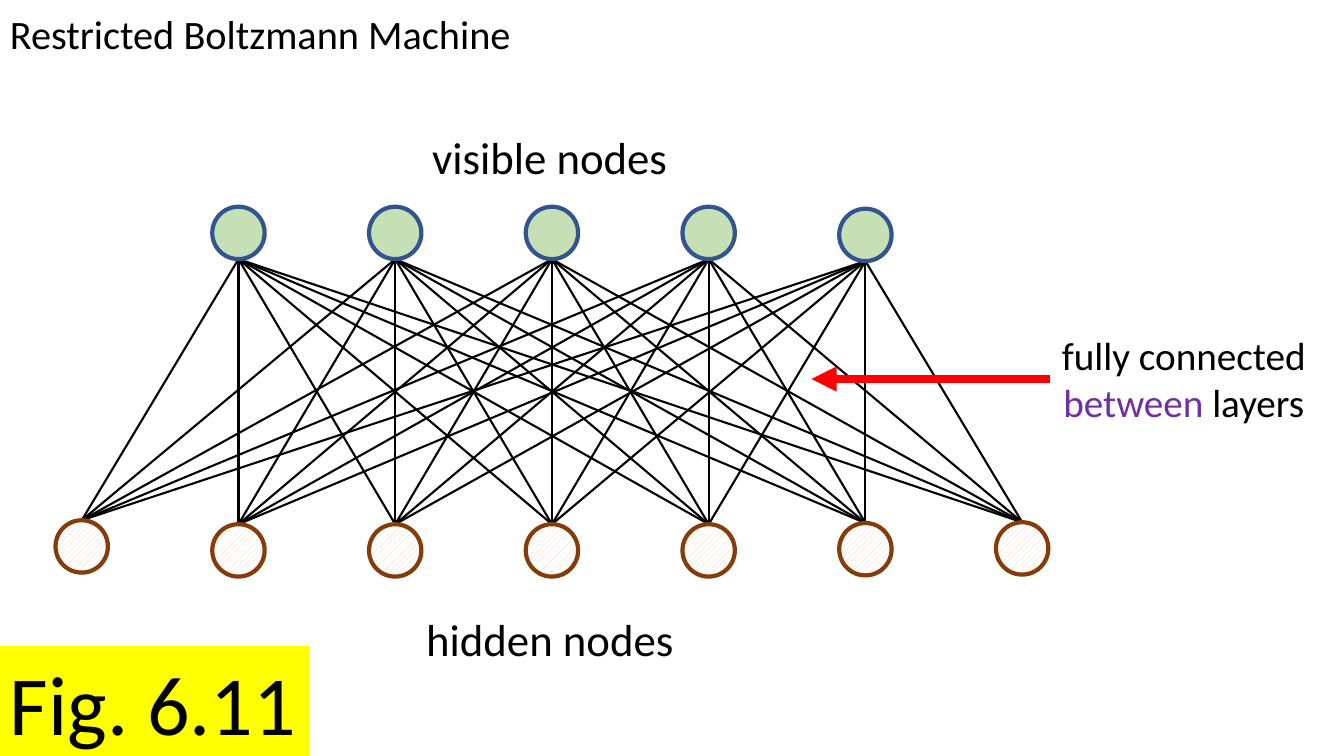
from dataclasses import dataclass
from itertools import product

from lxml import etree
from pptx import Presentation
from pptx import util as u
from pptx.dml import color
from pptx.enum import dml, shapes, text
from pptx.oxml import ns


@dataclass(frozen=True)
class Theme:
    font: str = "Calibri"
    ink: str = "000000"
    accent: str = "7030A0"
    arrow: str = "FF0000"
    marker: str = "FFFF00"
    visible_fill: str = "C5E0B4"
    visible_line: str = "325491"
    hidden_hatch: str = "F8CBAD"
    hidden_back: str = "FFFFFF"
    hidden_line: str = "843C0B"
    title_size: float = 28.8
    layer_size: float = 32
    note_size: float = 28
    figure_size: float = 60
    edge_width: float = 1.5
    node_width: float = 3
    arrow_width: float = 6


THEME = Theme()
DIAMETER = 1.32
PITCH = 3.95
FIRST_CENTER = 2.06
VISIBLE_TOPS = [5.21] * 4 + [5.26]
HIDDEN_TOPS = [13.11] + [13.21] * 4 + [13.18, 13.16]


def rgb(value):
    return color.RGBColor.from_string(value)


def format_runs(paragraph, size):
    for run in paragraph.runs:
        run.font.name = THEME.font
        run.font.size = u.Pt(size)
        run.font.color.rgb = rgb(THEME.ink)


def add_label(slide, words, box, size, wrap=False):
    label = slide.shapes.add_textbox(*map(u.Cm, box))
    label.text_frame.text = words
    label.text_frame.word_wrap = wrap
    format_runs(label.text_frame.paragraphs[0], size)
    return label


def add_line(slide, start, end, line_color, width):
    line = slide.shapes.add_connector(
        shapes.MSO_CONNECTOR.STRAIGHT, *map(u.Cm, (*start, *end)))
    line.line.color.rgb = rgb(line_color)
    line.line.width = u.Pt(width)
    etree.SubElement(line._element.spPr, ns.qn("a:effectLst"))
    return line


def add_node(slide, center, top, outline):
    node = slide.shapes.add_shape(
        shapes.MSO_SHAPE.OVAL,
        *map(u.Cm, (center - DIAMETER / 2, top, DIAMETER, DIAMETER)))
    node.shadow.inherit = False
    node.line.color.rgb = rgb(outline)
    node.line.width = u.Pt(THEME.node_width)
    return node


def add_visible_node(slide, center, top):
    node = add_node(slide, center, top, THEME.visible_line)
    node.fill.solid()
    node.fill.fore_color.rgb = rgb(THEME.visible_fill)


def add_hidden_node(slide, center, top):
    node = add_node(slide, center, top, THEME.hidden_line)
    node.fill.patterned()
    node.fill.pattern = dml.MSO_PATTERN.WIDE_UPWARD_DIAGONAL
    node.fill.fore_color.rgb = rgb(THEME.hidden_hatch)
    node.fill.back_color.rgb = rgb(THEME.hidden_back)


def place_layer(tops, first_column):
    return [(FIRST_CENTER + PITCH * (first_column + i), top)
            for i, top in enumerate(tops)]


def add_network(slide):
    visible = place_layer(VISIBLE_TOPS, 1)
    hidden = place_layer(HIDDEN_TOPS, 0)
    for (x, top), target in product(visible, hidden):
        add_line(slide, (x, top + DIAMETER), target, THEME.ink, THEME.edge_width)
    for center, top in visible:
        add_visible_node(slide, center, top)
    for center, top in hidden:
        add_hidden_node(slide, center, top)


def add_connection_note(slide):
    note = add_label(slide, "", (26.47, 8.23, 6.73, 2.64), THEME.note_size)
    sentence = note.text_frame.paragraphs[0]
    sentence.text = "fully connected\vbetween"
    sentence.add_run().text = " layers"
    sentence.alignment = text.PP_ALIGN.CENTER
    format_runs(sentence, THEME.note_size)
    sentence.runs[1].font.color.rgb = rgb(THEME.accent)
    arrow = add_line(slide, (26.47, 9.55), (20.45, 9.55),
                     THEME.arrow, THEME.arrow_width)
    etree.SubElement(arrow.line._get_or_add_ln(), ns.qn("a:tailEnd"), type="triangle")


def main():
    deck = Presentation()
    deck.slide_width, deck.slide_height = u.Cm(33.87), u.Cm(19.05)
    slide = deck.slides.add_slide(deck.slide_layouts[6])

    title = add_label(slide, "Restricted Boltzmann Machine",
                      (0, 0, 14.02, 1.83), THEME.title_size, wrap=True)
    title.text_frame.vertical_anchor = text.MSO_ANCHOR.MIDDLE
    title.text_frame.paragraphs[0].line_spacing = 0.9

    add_network(slide)
    add_label(slide, "visible nodes", (10.64, 3.15, 6.5, 1.63), THEME.layer_size)
    add_label(slide, "hidden nodes", (10.49, 15.29, 6.81, 1.63), THEME.layer_size)
    add_connection_note(slide)

    figure = add_label(slide, "Fig. 6.11", (0, 16.28, 7.8, 2.82), THEME.figure_size)
    figure.fill.solid()
    figure.fill.fore_color.rgb = rgb(THEME.marker)

    deck.save("out.pptx")


if __name__ == "__main__":
    main()
